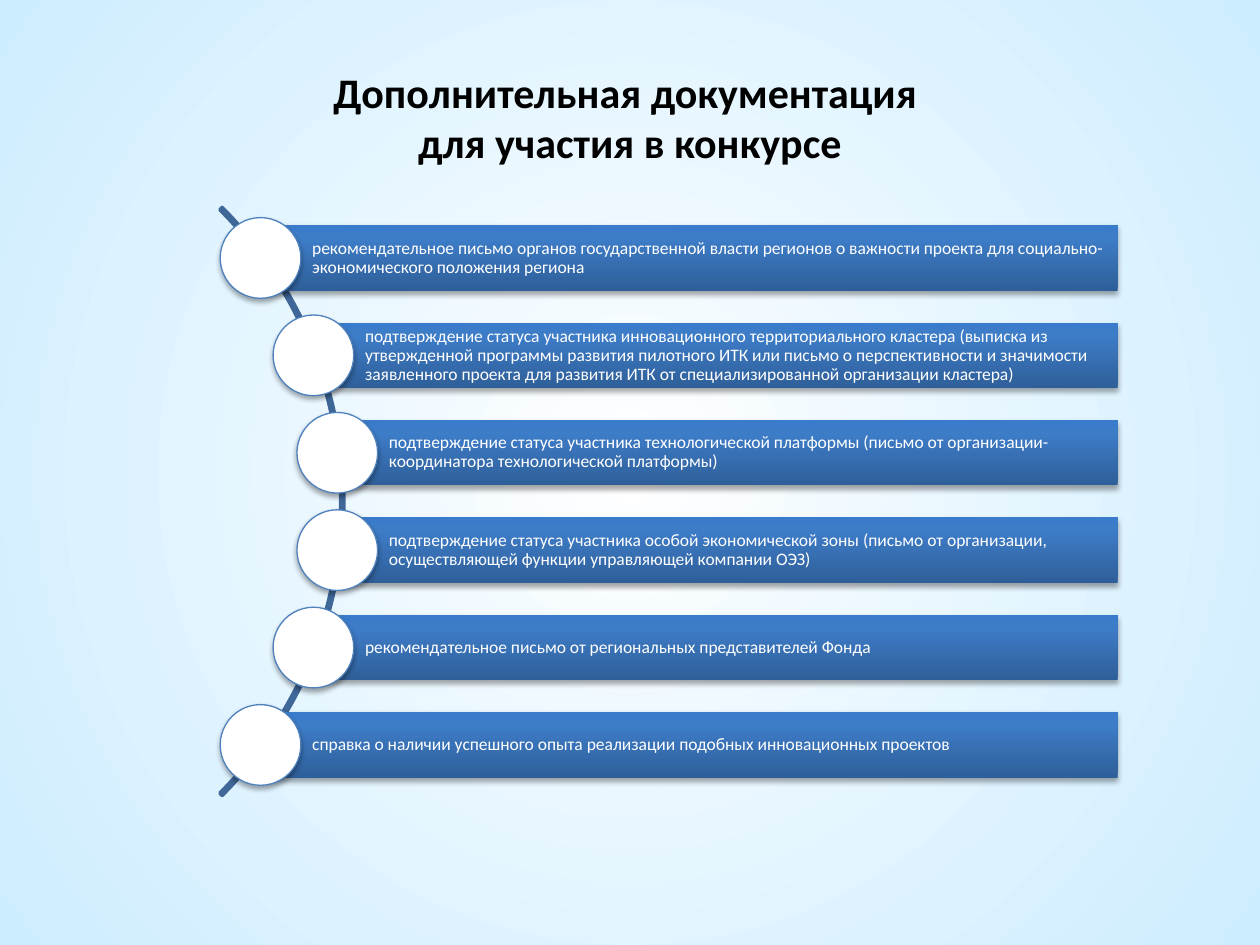
from math import sqrt
from pptx import Presentation
from pptx.dml.color import RGBColor
from pptx.enum.shapes import MSO_SHAPE
from pptx.enum.text import MSO_ANCHOR, PP_ALIGN
from pptx.oxml import parse_xml
from pptx.oxml.ns import nsdecls, qn
from pptx.util import Inches, Pt

WHITE = RGBColor(0xFF, 0xFF, 0xFF)
BLACK = RGBColor(0, 0, 0)
SKY = RGBColor(0xCC, 0xEC, 0xFF)
NAVY = RGBColor(0x2F, 0x5F, 0x99)
BLUE = RGBColor(0x3D, 0x7C, 0xC7)
LIGHT = RGBColor(0x3A, 0x7C, 0xCB)
EDGE = RGBColor(0x4F, 0x81, 0xBD)
CURVE = RGBColor(0x3F, 0x67, 0x97)

WIDE, HIGH = 10, 7.5
MID_X, MID_Y = -0.57, 3.98
ARC, ORBIT = 3.3, 3.27
PITCH, BAR, DOT = 0.773, 0.52, 0.64
RIGHT = 8.87

TITLE = "Дополнительная документация \vдля участия в конкурсе"
ITEMS = [
    "рекомендательное письмо органов государственной власти регионов о важности проекта для социально-экономического положения региона",
    "подтверждение статуса участника инновационного территориального кластера (выписка из утвержденной программы развития пилотного ИТК или письмо о перспективности и значимости заявленного проекта для развития ИТК от специализированной организации кластера)",
    "подтверждение статуса участника технологической платформы (письмо от организации-координатора технологической платформы)",
    "подтверждение статуса участника особой экономической зоны (письмо от организации, осуществляющей функции управляющей компании ОЭЗ)",
    "рекомендательное письмо от региональных представителей Фонда",
    "справка о наличии успешного опыта реализации подобных инновационных проектов",
]


def blend(fill, root, stops, shade):
    fill.gradient()
    node = root.find(".//" + qn("a:gradFill"))
    marks = "".join(
        f'<a:gs pos="{pos * 1000}"><a:srgbClr val="{color}"/></a:gs>'
        for pos, color in stops
    )
    fresh = parse_xml(
        f'<a:gradFill {nsdecls("a")} rotWithShape="1">'
        f"<a:gsLst>{marks}</a:gsLst>{shade}</a:gradFill>"
    )
    node.getparent().replace(node, fresh)


def backdrop(slide):
    shade = (
        '<a:path path="circle">'
        '<a:fillToRect l="50000" t="50000" r="50000" b="50000"/></a:path>'
    )
    blend(slide.background.fill, slide.element, [(0, WHITE), (100, SKY)], shade)


def shadow(shape):
    shape.element.spPr.append(parse_xml(
        f'<a:effectLst {nsdecls("a")}>'
        f'<a:outerShdw blurRad="{Pt(3.1)}" dist="{Pt(1.8)}" dir="5400000" rotWithShape="0">'
        '<a:srgbClr val="000000"><a:alpha val="35000"/></a:srgbClr>'
        "</a:outerShdw></a:effectLst>"
    ))


def write(shape, text, size, color, bold=False, align=PP_ALIGN.LEFT,
          inset=(0.1, 0.05, 0.1, 0.05), space=1.0):
    frame = shape.text_frame
    frame.word_wrap = True
    frame.vertical_anchor = MSO_ANCHOR.MIDDLE
    (frame.margin_left, frame.margin_top,
     frame.margin_right, frame.margin_bottom) = map(Inches, inset)
    frame.text = text
    para = frame.paragraphs[0]
    para.alignment = align
    para.line_spacing = space
    for run in para.runs:
        font = run.font
        font.name, font.size, font.bold = "Calibri", Pt(size), bold
        font.color.rgb = color


def heading(slide):
    box = slide.shapes.add_textbox(*map(Inches, (
        0.05 * WIDE, 0.04 * HIGH, 0.9 * WIDE, HIGH / 6)))
    write(box, TITLE, 24, BLACK, bold=True, align=PP_ALIGN.CENTER)


def add(slide, kind, left, top, width, height):
    return slide.shapes.add_shape(kind, *map(Inches, (left, top, width, height)))


def curve(slide):
    arc = add(slide, MSO_SHAPE.BLOCK_ARC, MID_X - ARC, MID_Y - ARC, 2 * ARC, 2 * ARC)
    for i, value in enumerate((189, 27, 0.004)):
        arc.adjustments[i] = value
    arc.shadow.inherit = False
    arc.fill.background()
    arc.line.color.rgb = CURVE
    arc.line.width = Pt(2)


def bar(slide, x, y, text):
    rect = add(slide, MSO_SHAPE.RECTANGLE, x, y - BAR / 2, RIGHT - x, BAR)
    blend(rect.fill, rect.element, [(0, NAVY), (80, BLUE), (100, LIGHT)],
          '<a:lin ang="16200000" scaled="0"/>')
    rect.line.fill.background()
    shadow(rect)
    write(rect, text, 10, WHITE, inset=(0.41, 0.03, 0.03, 0.03), space=0.9)


def dot(slide, x, y):
    disc = add(slide, MSO_SHAPE.OVAL, x - DOT / 2, y - DOT / 2, DOT, DOT)
    disc.fill.solid()
    disc.fill.fore_color.rgb = WHITE
    disc.line.color.rgb = EDGE
    disc.line.width = Pt(0.75)
    shadow(disc)


def main():
    deck = Presentation()
    deck.slide_width, deck.slide_height = Inches(WIDE), Inches(HIGH)
    slide = deck.slides.add_slide(deck.slide_layouts[6])
    backdrop(slide)
    heading(slide)
    curve(slide)
    for row, text in enumerate(ITEMS):
        rise = (row - (len(ITEMS) - 1) / 2) * PITCH
        x, y = MID_X + sqrt(ORBIT ** 2 - rise ** 2), MID_Y + rise
        bar(slide, x, y, text)
        dot(slide, x, y)
    deck.save("out.pptx")


if __name__ == "__main__":
    main()
